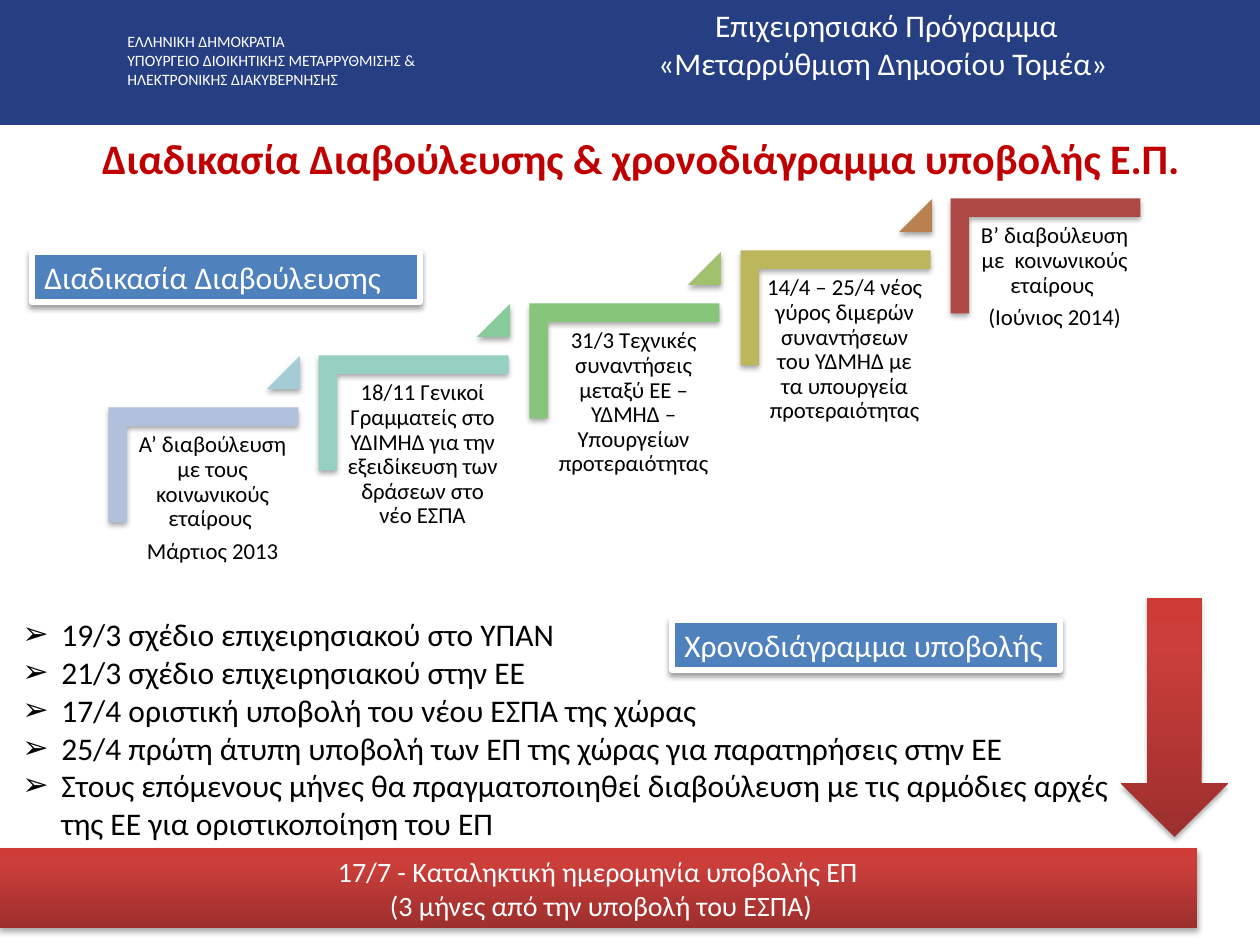
import copy
import pptx
import pptx.util
import pptx.dml.color
import pptx.enum.shapes
import pptx.enum.text
import pptx.oxml
import pptx.oxml.ns
from dataclasses import dataclass

UNIT = 914400 / 126  # EMU in one px
KIND = pptx.enum.shapes.MSO_SHAPE
MID = pptx.enum.text.PP_ALIGN.CENTER
LEFT = pptx.enum.text.PP_ALIGN.LEFT
NS = pptx.oxml.ns.nsdecls("a")
rgb = pptx.dml.color.RGBColor.from_string


@dataclass
class Theme:
    font: str = "Calibri"
    white: str = "FFFFFF"
    black: str = "000000"
    navy: str = "263E82"
    blue: str = "4F81BD"
    red: str = "C00000"
    fade: tuple = ((0, "9C2F2D"), (0.8, "CB3E3A"), (1, "CE3B37"))
    steps: tuple = ("B2C1DB", "96D0C1", "87C67A", "BCB65D", "AE4845")
    peaks: tuple = ("A4CCD5", "88CB9B", "A1C16C", "B8814F")
    tiny: int = 9
    small: int = 13
    note: int = 16
    body: int = 18
    head: int = 24


theme = Theme()


def draw(kind, box, fill=None, shade=35):
    """Add a filled shape, or a text box if kind is None."""
    area = [round(v * UNIT) for v in box]
    if kind is None:
        item = slide.shapes.add_textbox(*area)
        item.text_frame.word_wrap = True
        return item
    item = slide.shapes.add_shape(kind, *area)
    item.line.fill.background()
    item.shadow.inherit = False
    if fill:
        item.fill.solid()
        item.fill.fore_color.rgb = rgb(fill)
    if shade:
        glow = item.element.spPr.find(pptx.oxml.ns.qn("a:effectLst"))
        glow.append(pptx.oxml.parse_xml(
            f'<a:outerShdw {NS} blurRad="39400" dist="22900" dir="5400000" rotWithShape="0">'
            f'<a:srgbClr val="000000"><a:alpha val="{shade}000"/></a:srgbClr></a:outerShdw>'))
    return item


def write(frame, lines, size, tint, align=LEFT, indent=0, extra=(), bold=False):
    """Fill a frame, one paragraph a line; extra holds XML for each."""
    for i, line in enumerate(lines):
        para = frame.paragraphs[0] if i == 0 else frame.add_paragraph()
        para.alignment = align
        props = para._p.get_or_add_pPr()
        if indent:
            props.set("marL", str(round(indent * UNIT)))
            props.set("indent", str(round(-indent * UNIT)))
        for part in extra:
            props.append(pptx.oxml.parse_xml(part))
        run = para.add_run()
        run.text = line
        run.font.name = theme.font
        run.font.size = pptx.util.Pt(size)
        run.font.bold = bold
        run.font.color.rgb = rgb(tint)


deck = pptx.Presentation()
deck.slide_width = round(1260 * UNIT)
deck.slide_height = round(945 * UNIT)
slide = deck.slides.add_slide(deck.slide_layouts[5])

# Header band
draw(KIND.RECTANGLE, (0, 0, 1260, 125), theme.navy, shade=0)
state = draw(None, (115, 26, 326, 71))
write(state.text_frame, [
    "ΕΛΛΗΝΙΚΗ ΔΗΜΟΚΡΑΤΙΑ",
    "ΥΠΟΥΡΓΕΙΟ ΔΙΟΙΚΗΤΙΚΗΣ ΜΕΤΑΡΡΥΘΜΙΣΗΣ &",
    "ΗΛΕΚΤΡΟΝΙΚΗΣ ΔΙΑΚΥΒΕΡΝΗΣΗΣ",
], theme.tiny, theme.white)
plan = draw(None, (535, 0, 703, 89))
write(plan.text_frame, ["Επιχειρησιακό Πρόγραμμα", "«Μεταρρύθμιση Δημοσίου Τομέα» "],
      theme.body, theme.white, MID)

# Title
title = slide.shapes.title
title.left, title.top, title.width, title.height = [
    round(v * UNIT) for v in (53, 126, 1176, 63)]
title.text_frame.auto_size = pptx.enum.text.MSO_AUTO_SIZE.NONE
title.text_frame.vertical_anchor = pptx.enum.text.MSO_ANCHOR.MIDDLE
write(title.text_frame, ["Διαδικασία Διαβούλευσης & χρονοδιάγραμμα υποβολής Ε.Π."],
      theme.head, theme.red, MID, indent=48, bold=True)

# Rising steps
steps = [
    ["Α’ διαβούλευση με τους κοινωνικούς εταίρους ", "Μάρτιος 2013"],
    ["18/11 Γενικοί Γραμματείς στο ΥΔΙΜΗΔ για την εξειδίκευση των δράσεων στο νέο ΕΣΠΑ"],
    ["31/3 Τεχνικές συναντήσεις μεταξύ ΕΕ – ΥΔΜΗΔ – Υπουργείων προτεραιότητας"],
    ["14/4 – 25/4 νέος γύρος διμερών συναντήσεων του ΥΔΜΗΔ με τα υπουργεία προτεραιότητας"],
    ["Β’ διαβούλευση με  κοινωνικούς εταίρους ", "(Ιούνιος 2014)"],
]
space = [f'<a:lnSpc {NS}><a:spcPct val="90000"/></a:lnSpc>',
         f'<a:spcAft {NS}><a:spcPct val="35000"/></a:spcAft>']
for i, lines in enumerate(steps):
    x, y = round(i * 210.5), round(i * -52.2)
    bend = draw(KIND.RECTANGLE, (146 + x, 370 + y, 115, 190), theme.steps[i])
    bend.rotation = 90
    # The corner preset is not in MSO_SHAPE, so it is set by name
    geom = bend.element.spPr.find(pptx.oxml.ns.qn("a:prstGeom"))
    geom.set("prst", "corner")
    for name in ("adj1", "adj2"):
        geom[0].append(pptx.oxml.parse_xml(
            f'<a:gd {NS} name="{name}" fmla="val 16100"/>'))
    text = draw(None, (127 + x, 427 + y, 171, 151)).text_frame
    text.margin_left = text.margin_right = pptx.util.Inches(0.05)
    write(text, lines, theme.small, theme.black, MID, extra=space)
    if i < len(theme.peaks):
        peak = draw(KIND.ISOSCELES_TRIANGLE, (267 + x, 356 + y, 33, 33), theme.peaks[i])
        peak.adjustments[0] = 1

# Dates
dates = draw(None, (10, 609, 1124, 242))
write(dates.text_frame, [
    "19/3 σχέδιο επιχειρησιακού στο ΥΠΑΝ",
    "21/3 σχέδιο επιχειρησιακού στην ΕΕ",
    "17/4 οριστική υποβολή του νέου ΕΣΠΑ της χώρας",
    "25/4 πρώτη άτυπη υποβολή των ΕΠ της χώρας για παρατηρήσεις στην ΕΕ",
    "Στους επόμενους μήνες θα πραγματοποιηθεί διαβούλευση με τις αρμόδιες αρχές"
    " της ΕΕ για οριστικοποίηση του ΕΠ",
], theme.body, theme.black, indent=39,
    extra=[f'<a:buFont {NS} typeface="{theme.font}"/>',
           f'<a:buChar {NS} char="➢"/>'])

# Arrow down to the deadline bar
arrow = draw(KIND.DOWN_ARROW, (1121, 598, 107, 239))
bar = draw(KIND.RECTANGLE, (-1, 848, 1198, 80))
for item in (arrow, bar):
    item.fill.gradient()
    item.fill.gradient_angle = 90
    stops = item.element.spPr.find(".//" + pptx.oxml.ns.qn("a:gsLst"))
    stops.append(copy.deepcopy(stops[-1]))
    for stop, (place, tint) in zip(item.fill.gradient_stops, theme.fade):
        stop.position = place
        stop.color.rgb = rgb(tint)
write(bar.text_frame, ["17/7 - Καταληκτική ημερομηνία υποβολής ΕΠ",
                       " (3 μήνες από την υποβολή του ΕΣΠΑ)"],
      theme.note, theme.white, MID)

# Section labels
for x, y, name in ((32, 252, "Διαδικασία Διαβούλευσης"),
                   (672, 620, "Χρονοδιάγραμμα υποβολής")):
    label = draw(KIND.RECTANGLE, (x, y, 388, 50), theme.blue, shade=38)
    label.line.color.rgb = rgb(theme.white)
    label.line.width = pptx.util.Pt(3)
    write(label.text_frame, [name], theme.body, theme.white)

deck.save("out.pptx")
